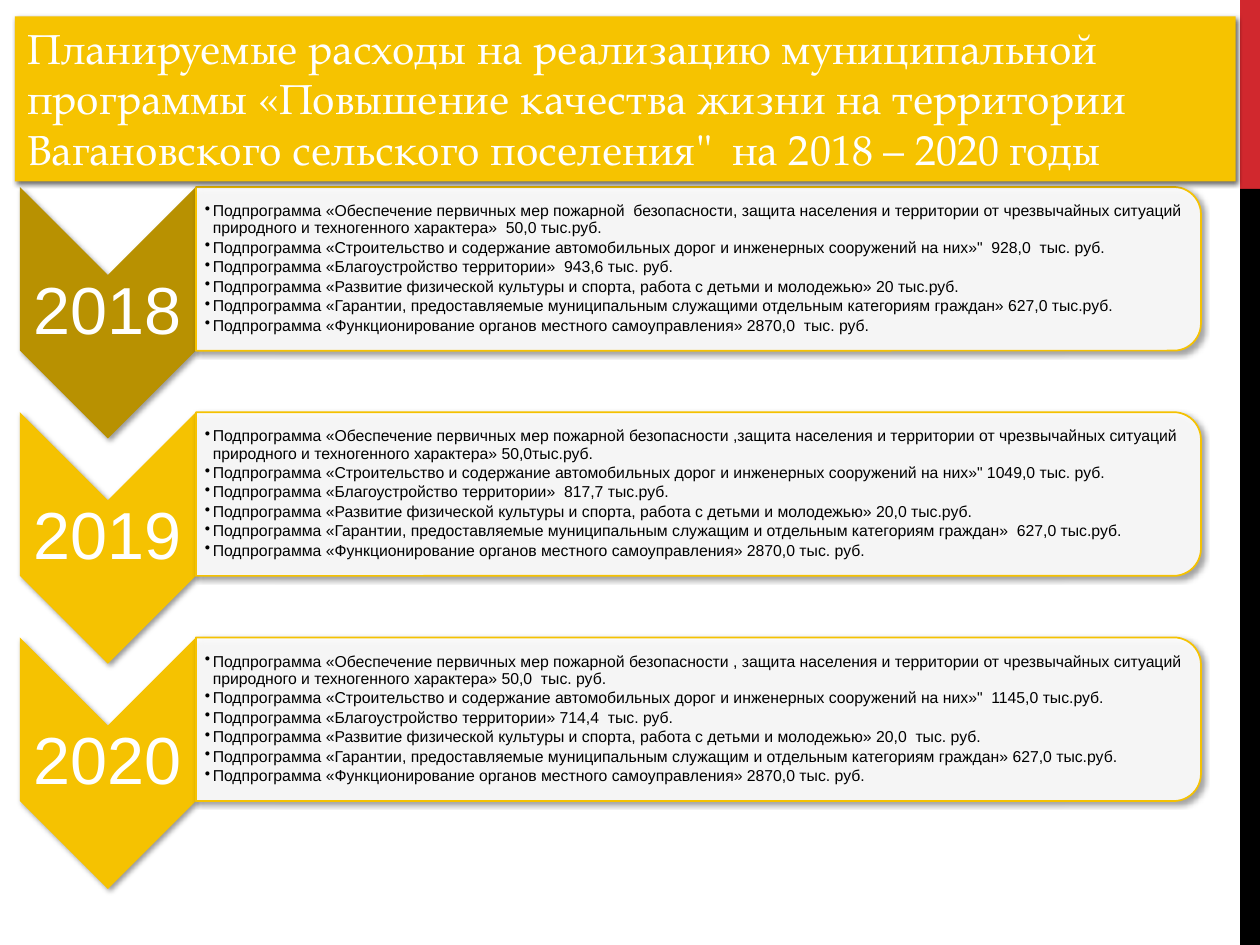
from dataclasses import dataclass

from lxml import etree
from pptx import Presentation
from pptx import util as u
from pptx.dml.color import RGBColor
from pptx.enum import shapes, text
from pptx.oxml import ns

WHITE = RGBColor(0xFF, 0xFF, 0xFF)
BLACK = RGBColor(0x00, 0x00, 0x00)
RED = RGBColor(0xD1, 0x28, 0x2E)
GOLD = RGBColor(0xF5, 0xC2, 0x01)
DARK_GOLD = RGBColor(0xB8, 0x91, 0x01)
TITLE_GOLD = RGBColor(0xF6, 0xC3, 0x00)

BODY_FONT = "Arial"
TITLE_FONT = "TeX Gyre Pagella"
TITLE = ("Планируемые расходы на реализацию муниципальной программы "
         "«Повышение качества жизни на территории Вагановского сельского "
         "поселения\"  на 2018 – 2020 годы")

ROADS = "Строительство и содержание автомобильных дорог и инженерных сооружений на них"
AMENITIES = "Благоустройство территории"
SPORT = "Развитие физической культуры и спорта, работа с детьми и молодежью"
GOVERNMENT = "Функционирование органов местного самоуправления"

FIRST_TOP, ROW_PITCH = 3.77, 4.54
CHEVRON_LEFT, CHEVRON_WIDTH, CHEVRON_HEIGHT = 0.4, 3.55, 5.07
PANEL_LEFT, PANEL_WIDTH, PANEL_HEIGHT = 3.95, 20.26, 3.3


@dataclass(frozen=True)
class Box:
    """A frame in centimetres, as it is seen on the slide."""
    left: float
    top: float
    width: float
    height: float

    def quarter_turned(self) -> "Box":
        """Frame that covers this one after a rotation by 90 degrees."""
        shift = (self.width - self.height) / 2
        return Box(self.left + shift, self.top - shift, self.height, self.width)

    def lengths(self) -> list[u.Length]:
        return [u.Cm(v) for v in (self.left, self.top, self.width, self.height)]


@dataclass(frozen=True)
class YearPlan:
    year: str
    colour: RGBColor
    fire_safety: str
    guarantees: str
    amounts: tuple[str, ...]

    def lines(self) -> list[str]:
        safety = (f"Обеспечение первичных мер пожарной {self.fire_safety}защита населения и "
                  "территории от чрезвычайных ситуаций природного и техногенного характера")
        guarantees = (f"Гарантии, предоставляемые муниципальным {self.guarantees} "
                      "отдельным категориям граждан")
        names = (safety, ROADS, AMENITIES, SPORT, guarantees, GOVERNMENT)
        return [f"Подпрограмма «{name}»{amount}"
                for name, amount in zip(names, self.amounts)]


PLANS = (
    YearPlan("2018", DARK_GOLD, " безопасности, ", "служащими",
             ("  50,0 тыс.руб.", "\"  928,0  тыс. руб.", "  943,6 тыс. руб.",
              " 20 тыс.руб.", " 627,0 тыс.руб.", " 2870,0  тыс. руб.")),
    YearPlan("2019", GOLD, "безопасности ,", "служащим и",
             (" 50,0тыс.руб.", "\" 1049,0 тыс. руб.", "  817,7 тыс.руб.",
              " 20,0 тыс.руб.", "  627,0 тыс.руб.", " 2870,0 тыс. руб.")),
    YearPlan("2020", GOLD, "безопасности , ", "служащим и",
             (" 50,0  тыс. руб.", "\"  1145,0 тыс.руб.", " 714,4  тыс. руб.",
              " 20,0  тыс. руб.", " 627,0 тыс.руб.", " 2870,0 тыс. руб.")),
)


def add_filled(slide, kind, box: Box, fill: RGBColor, rotation: int = 0):
    shape = slide.shapes.add_shape(kind, *box.lengths())
    shape.rotation = rotation
    shape.shadow.inherit = False
    shape.fill.solid()
    shape.fill.fore_color.rgb = fill
    shape.line.fill.background()
    return shape


def add_xml(parent, tag: str, **attributes: str):
    return etree.SubElement(parent, ns.qn(tag), attributes)


def cast_shadow(shape, blur: float, distance: float, opacity: int) -> None:
    """Add a soft black shadow towards the lower right."""
    effects = shape._element.spPr.find(ns.qn("a:effectLst"))
    shadow = add_xml(effects, "a:outerShdw", blurRad=str(u.Pt(blur)),
                     dist=str(u.Pt(distance)), dir="2700000", rotWithShape="0")
    colour = add_xml(shadow, "a:srgbClr", val=str(BLACK))
    add_xml(colour, "a:alpha", val=str(opacity * 1000))


def add_run(paragraph, wording: str, size: float, font: str, colour: RGBColor) -> None:
    run = paragraph.add_run()
    run.text = wording
    run.font.size = u.Pt(size)
    run.font.name = font
    run.font.color.rgb = colour


def add_text_frame(slide, box: Box, insets: tuple[float, float, float, float]):
    frame = slide.shapes.add_textbox(*box.lengths()).text_frame
    frame.word_wrap = True
    frame.vertical_anchor = text.MSO_ANCHOR.MIDDLE
    (frame.margin_left, frame.margin_top,
     frame.margin_right, frame.margin_bottom) = [u.Cm(v) for v in insets]
    return frame


def space_lines(paragraph, after_percent: int):
    """Tighten the lines and set the gap after, relative to the text size."""
    paragraph.line_spacing = 0.9
    properties = paragraph._p.get_or_add_pPr()
    after = add_xml(properties, "a:spcAft")
    add_xml(after, "a:spcPct", val=str(after_percent * 1000))
    return properties


def add_year(slide, plan: YearPlan, top: float) -> None:
    box = Box(CHEVRON_LEFT, top, CHEVRON_WIDTH, CHEVRON_HEIGHT)
    chevron = add_filled(slide, shapes.MSO_SHAPE.CHEVRON, box.quarter_turned(),
                         plan.colour, 90)
    cast_shadow(chevron, 3.1, 1.8, 40)
    label = Box(CHEVRON_LEFT, top + CHEVRON_WIDTH / 2, CHEVRON_WIDTH,
                CHEVRON_HEIGHT - CHEVRON_WIDTH)
    paragraph = add_text_frame(slide, label, (0.07,) * 4).paragraphs[0]
    paragraph.alignment = text.PP_ALIGN.CENTER
    space_lines(paragraph, 35)
    add_run(paragraph, plan.year, 38, BODY_FONT, WHITE)


def add_subprogrammes(slide, plan: YearPlan, top: float) -> None:
    box = Box(PANEL_LEFT, top, PANEL_WIDTH, PANEL_HEIGHT)
    panel = add_filled(slide, shapes.MSO_SHAPE.ROUND_2_SAME_RECTANGLE,
                       box.quarter_turned(), WHITE, 90)
    colour = panel._element.spPr.find(".//" + ns.qn("a:srgbClr"))
    add_xml(colour, "a:alpha", val="90000")
    panel.line.color.rgb = GOLD
    panel.line.width = u.Pt(1)
    cast_shadow(panel, 3.1, 1.8, 40)

    inner = Box(PANEL_LEFT, top + 0.16, PANEL_WIDTH - 0.16, PANEL_HEIGHT - 0.32)
    frame = add_text_frame(slide, inner, (0.18, 0.03, 0.03, 0.03))
    for index, line in enumerate(plan.lines()):
        paragraph = frame.add_paragraph() if index else frame.paragraphs[0]
        paragraph.level = 1
        properties = space_lines(paragraph, 15)
        properties.set("marL", str(u.Cm(0.16)))
        properties.set("indent", str(-u.Cm(0.16)))
        add_xml(properties, "a:buChar", char="•")
        add_run(paragraph, line, 9, BODY_FONT, BLACK)


def add_title(slide) -> None:
    banner = add_filled(slide, shapes.MSO_SHAPE.RECTANGLE,
                        Box(0.3, 0.33, 24.61, 3.33), TITLE_GOLD)
    cast_shadow(banner, 3, 1.5, 60)
    frame = banner.text_frame
    frame.word_wrap = True
    frame.auto_size = text.MSO_AUTO_SIZE.SHAPE_TO_FIT_TEXT
    frame.vertical_anchor = text.MSO_ANCHOR.TOP
    frame.paragraphs[0].alignment = text.PP_ALIGN.LEFT
    add_run(frame.paragraphs[0], TITLE, 24, TITLE_FONT, WHITE)


def main() -> None:
    deck = Presentation()
    deck.slide_width, deck.slide_height = u.Cm(25.4), u.Cm(19.05)
    slide = deck.slides.add_slide(deck.slide_layouts[6])
    for top, height, colour in ((0, 3.81, RED), (3.81, 15.24, BLACK)):
        add_filled(slide, shapes.MSO_SHAPE.RECTANGLE, Box(25, top, 0.4, height), colour)
    for row, plan in enumerate(PLANS):
        top = FIRST_TOP + row * ROW_PITCH
        add_year(slide, plan, top)
        add_subprogrammes(slide, plan, top)
    add_title(slide)
    deck.save("out.pptx")


if __name__ == "__main__":
    main()
